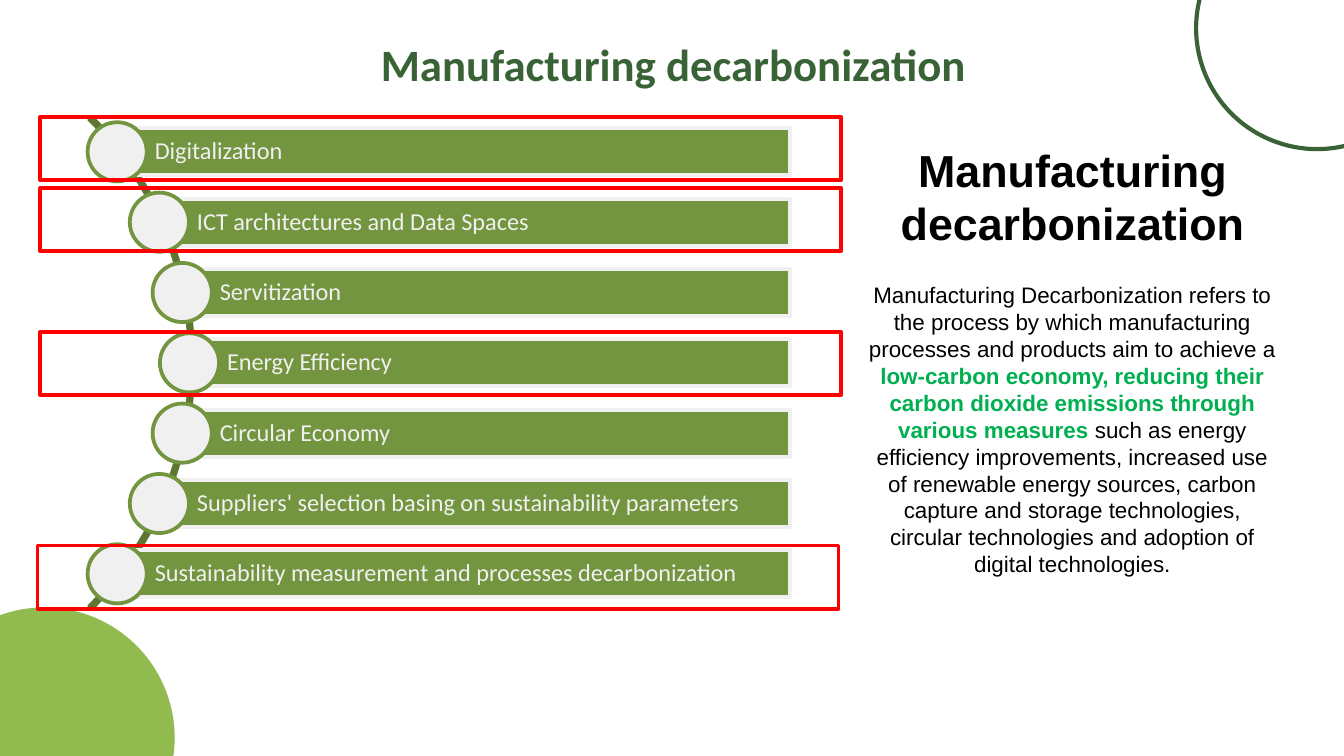
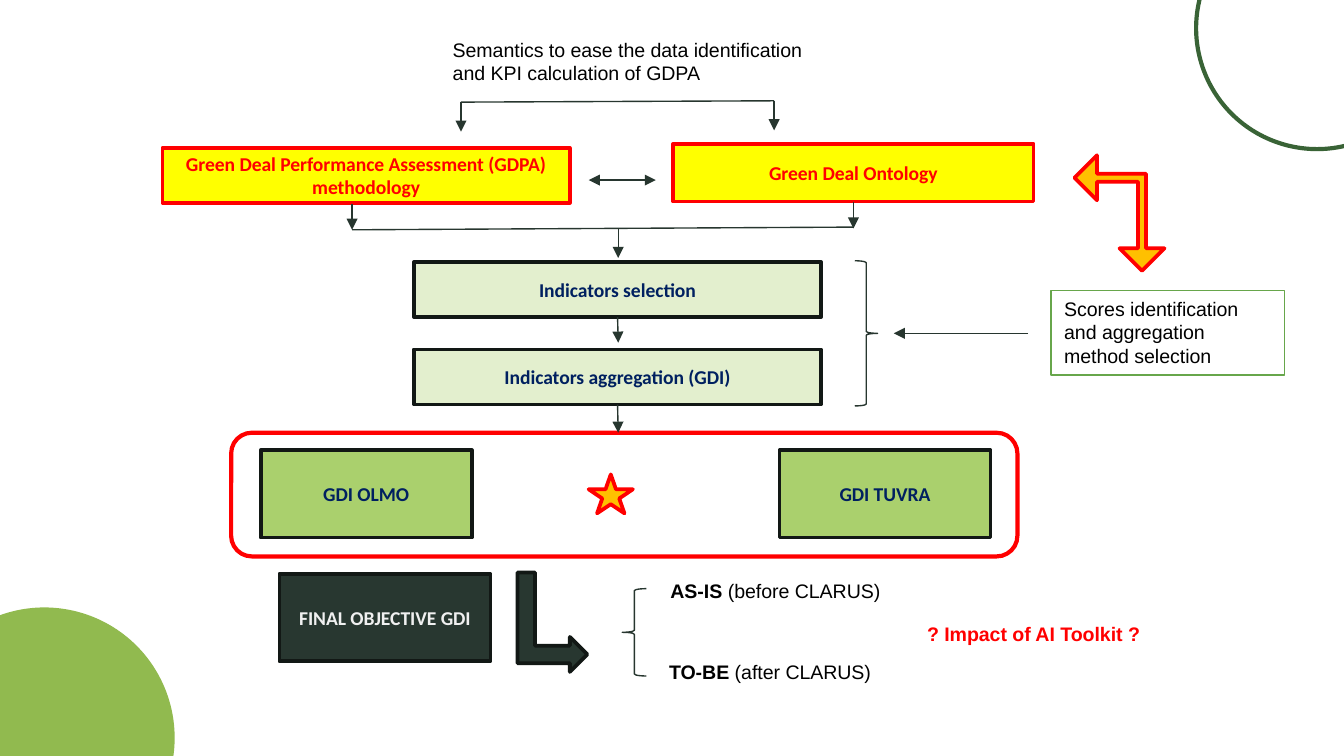
import math
import pptx
import pptx.util
import pptx.dml.color
import pptx.enum.shapes
import pptx.enum.text
import pptx.oxml

Inches = pptx.util.Inches
Pt = pptx.util.Pt
Shape = pptx.enum.shapes.MSO_SHAPE
Align = pptx.enum.text.PP_ALIGN
Anchor = pptx.enum.text.MSO_ANCHOR
rgb = pptx.dml.color.RGBColor.from_string


class Theme:
    head, body = "Calibri", "Arial"
    title, item, text, label = 24, 13, 12, 10.5
    forest, leaf, moss, arc = "396336", "91BA4F", "74953F", "5D7732"
    light, lime, pale, dark = "F0F0F0", "AAD06D", "E3EFCE", "283730"
    edge, wire, frame = "121815", "27362F", "67A64B"
    red, yellow, amber = "FF0000", "FFFF00", "FFC000"
    navy, black, green = "002060", "000000", "00B050"


def draw(slide, kind, box, fill=None, line=None, width=2, turn=0):
    """Add a preset shape; no fill or line colour means none is drawn."""
    shape = slide.shapes.add_shape(kind, *map(Inches, box))
    shape.shadow.inherit = False
    shape.rotation = turn
    if fill:
        shape.fill.solid()
        shape.fill.fore_color.rgb = rgb(fill)
    else:
        shape.fill.background()
    if line:
        shape.line.color.rgb = rgb(line)
        shape.line.width = Pt(width)
    else:
        shape.line.fill.background()
    return shape


def write(para, parts, size, color, face=Theme.body, bold=False, align=Align.LEFT):
    """Fill a paragraph; parts is a string or a list of (text, bold, colour)."""
    para.alignment = align
    font = para.font
    font.size, font.name, font.bold = Pt(size), face, bold
    font.color.rgb = rgb(color)
    if isinstance(parts, str):
        para.add_run().text = parts
        return
    for text, strong, tint in parts:
        run = para.add_run()
        run.text = text
        run.font.bold = strong
        run.font.color.rgb = rgb(tint)


deck = pptx.Presentation()
deck.slide_width = Inches(10)
deck.slide_height = Inches(10) * 9 // 16
goals, flow = [deck.slides.add_slide(deck.slide_layouts[6]) for _ in range(2)]
for slide in (goals, flow):
    draw(slide, Shape.OVAL, (-0.64, 4.52, 1.94, 1.94), Theme.leaf)
    draw(slide, Shape.OVAL, (8.9, -0.69, 1.8, 1.8), None, Theme.forest, 2.25)

# Slide 1: themes along an arc
title = goals.shapes.add_textbox(*map(Inches, (0.35, 0.17, 9.32, 0.47))).text_frame
title.word_wrap = True
title.margin_top = title.margin_bottom = Inches(0.1)
write(title.paragraphs[0], "Manufacturing decarbonization", Theme.title,
      Theme.forest, Theme.head, True, Align.CENTER)

curve = draw(goals, Shape.BLOCK_ARC, (-3.74, 0.11, 5.18, 5.18), None, Theme.arc)
for i, value in enumerate((189, 27, 0.005)):
    curve.adjustments[i] = value

topics = (
    "Digitalization",
    "ICT architectures and Data Spaces",
    "Servitization",
    "Energy Efficiency",
    "Circular Economy",
    "Suppliers' selection basing on sustainability parameters",
    "Sustainability measurement and processes decarbonization",
)
hub, mid, radius, pitch = -1.15, 2.7, 2.56, 1.57 / 3
bar, dot, right = 0.35, 0.44, 5.88
for i, topic in enumerate(topics):
    drop = (i - 3) * pitch
    x, y = hub + math.sqrt(radius ** 2 - drop ** 2), mid + drop
    strip = draw(goals, Shape.RECTANGLE, (x, y - bar / 2, right - x, bar),
                 Theme.moss, Theme.light)
    frame = strip.text_frame
    frame.word_wrap = True
    frame.vertical_anchor = Anchor.MIDDLE
    frame.margin_left = Inches(0.28)
    frame.margin_top = frame.margin_right = frame.margin_bottom = Inches(0.04)
    frame.paragraphs[0].line_spacing = 0.9
    write(frame.paragraphs[0], topic, Theme.item, Theme.light, Theme.head)
    draw(goals, Shape.OVAL, (x - dot / 2, y - dot / 2, dot, dot),
         Theme.light, Theme.moss)

about = goals.shapes.add_textbox(*map(Inches, (6.36, 1.01, 3.24, 3.37))).text_frame
about.word_wrap = True
write(about.paragraphs[0], "Manufacturing decarbonization", Theme.title,
      Theme.black, bold=True, align=Align.CENTER)
para = about.add_paragraph()
para.space_before = Pt(17)
write(para, [
    ("Manufacturing Decarbonization refers to the process by which manufacturing "
     "processes and products aim to achieve a ", False, Theme.black),
    ("low-carbon economy, reducing their carbon dioxide emissions through "
     "various measures ", True, Theme.green),
    ("such as energy efficiency improvements, increased use of renewable energy "
     "sources, carbon capture and storage technologies, circular technologies "
     "and adoption of digital technologies.", False, Theme.black),
], Theme.text, Theme.black, align=Align.CENTER)

for x, y in ((0.28, 4.06), (0.3, 1.4), (0.3, 0.87), (0.3, 2.47)):
    draw(goals, Shape.RECTANGLE, (x, y, 5.96, 0.47), None, Theme.red)

# Slide 2: assessment flow
draw(flow, Shape.ROUNDED_RECTANGLE, (1.72, 3.22, 5.85, 0.92), None, Theme.red, 2.25)
boxes = {}
for key, text, place, fill, line, color in (
    ("method", "Green Deal Performance Assessment (GDPA) methodology",
     (1.21, 1.1, 3.03, 0.41), Theme.yellow, Theme.red, Theme.red),
    ("model", "Green Deal Ontology",
     (5.01, 1.07, 2.68, 0.43), Theme.yellow, Theme.red, Theme.red),
    ("select", "Indicators selection",
     (3.08, 1.95, 3.03, 0.41), Theme.pale, Theme.edge, Theme.navy),
    ("merge", "Indicators aggregation (GDI)",
     (3.08, 2.6, 3.03, 0.41), Theme.pale, Theme.edge, Theme.navy),
    ("first", "GDI OLMO",
     (1.94, 3.35, 1.57, 0.65), Theme.lime, Theme.edge, Theme.navy),
    ("second", "GDI TUVRA",
     (5.8, 3.35, 1.57, 0.65), Theme.lime, Theme.edge, Theme.navy),
    ("final", "FINAL OBJECTIVE GDI",
     (2.08, 4.27, 1.57, 0.65), Theme.dark, Theme.edge, Theme.light),
):
    boxes[key] = draw(flow, Shape.RECTANGLE, place, fill, line)
    frame = boxes[key].text_frame
    frame.word_wrap = True
    frame.vertical_anchor = Anchor.MIDDLE
    write(frame.paragraphs[0], text, Theme.label, color, Theme.head, True, Align.CENTER)

draw(flow, Shape.STAR_5_POINT, (4.38, 3.53, 0.33, 0.29), Theme.amber, Theme.red)
draw(flow, Shape.BENT_UP_ARROW, (3.74, 4.37, 0.74, 0.52), Theme.dark, Theme.edge, turn=90)
fork = draw(flow, Shape.LEFT_UP_ARROW, (7.9, 1.25, 0.86, 0.67),
            Theme.amber, Theme.red, turn=270)
for i, value in enumerate((0.088, 0.25, 0.25)):
    fork.adjustments[i] = value
draw(flow, Shape.LEFT_BRACE, (4.63, 4.38, 0.18, 0.65), None, Theme.wire, 0.75)
draw(flow, Shape.LEFT_BRACE, (6.36, 1.94, 0.17, 1.08), None, Theme.wire, 0.75, 180)

# Each line: start, end, arrowheads, box whose bottom it leaves from
for start, end, heads, source in (
    ((3.43, 0.76), (5.76, 0.75), (), None),
    ((3.43, 0.76), (3.43, 0.98), ("tailEnd",), None),
    ((5.76, 0.75), (5.76, 0.97), ("tailEnd",), None),
    ((4.38, 1.34), (4.88, 1.34), ("headEnd", "tailEnd"), None),
    ((2.62, 1.52), (2.62, 1.71), ("tailEnd",), None),
    ((6.35, 1.5), (6.35, 1.7), ("tailEnd",), "model"),
    ((2.62, 1.71), (6.35, 1.69), (), None),
    ((4.6, 1.7), (4.6, 1.92), ("tailEnd",), None),
    ((4.6, 2.36), (4.6, 2.55), ("tailEnd",), "select"),
    ((4.6, 3.01), (4.6, 3.22), ("tailEnd",), "merge"),
    ((7.65, 2.48), (6.65, 2.48), ("tailEnd",), None),
):
    wire = flow.shapes.add_connector(pptx.enum.shapes.MSO_CONNECTOR.STRAIGHT,
                                     *map(Inches, start + end))
    if source:
        wire.begin_connect(boxes[source], 2)
    wire.line.color.rgb = rgb(Theme.wire)
    wire.line.width = Pt(0.75)
    for head in heads:
        tip = pptx.oxml.parse_xml(
            f'<a:{head} xmlns:a="http://schemas.openxmlformats.org/drawingml/2006/main"'
            ' type="triangle"/>')
        wire.line._get_or_add_ln().append(tip)
    props = wire._element.spPr
    props.append(props.makeelement(pptx.oxml.ns.qn("a:effectLst"), {}))

for place, parts, line in (
    ((3.27, 0.23, 2.88, 0.45),
     "Semantics to ease the data identification and KPI calculation of GDPA", None),
    ((7.82, 2.16, 1.74, 0.63),
     "Scores identification and aggregation method selection", Theme.frame),
    ((4.89, 4.26, 1.85, 0.28),
     [("AS-IS", True, Theme.black), (" (before CLARUS)", False, Theme.black)], None),
    ((4.88, 4.86, 1.85, 0.28),
     [("TO-BE", True, Theme.black), (" (after CLARUS)", False, Theme.black)], None),
    ((6.8, 4.58, 2.03, 0.28),
     [("? Impact of AI Toolkit ?", True, Theme.red)], None),
):
    note = flow.shapes.add_textbox(*map(Inches, place))
    if line:
        note.line.color.rgb = rgb(line)
        note.line.width = Pt(0.75)
    note.text_frame.word_wrap = True
    write(note.text_frame.paragraphs[0], parts, Theme.label, Theme.black)

deck.save("out.pptx")
